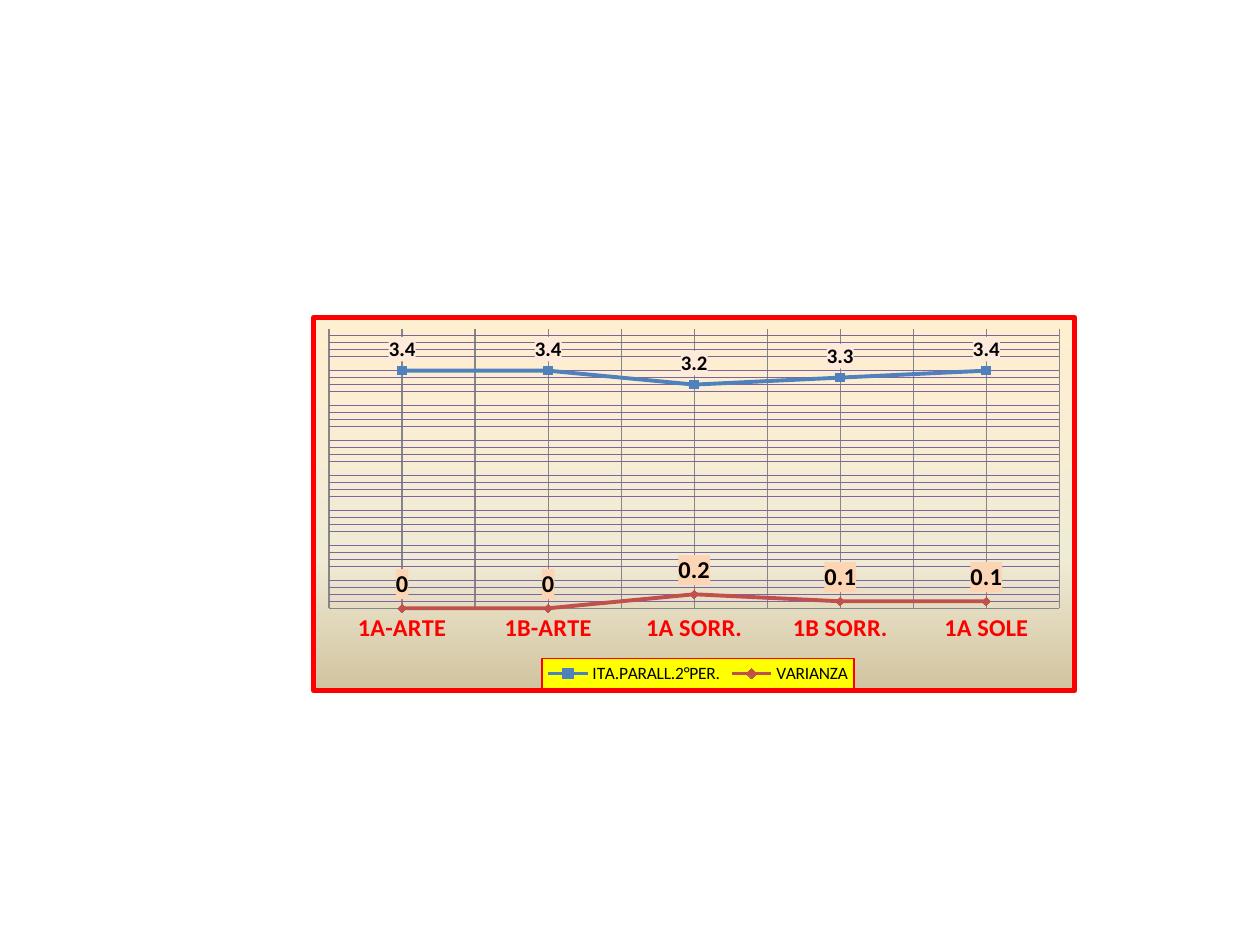
from lxml import etree
from pptx import Presentation
from pptx.chart.data import CategoryChartData
from pptx.dml.color import RGBColor
from pptx.enum.chart import XL_CHART_TYPE, XL_LABEL_POSITION, XL_LEGEND_POSITION, XL_TICK_MARK
from pptx.oxml import parse_xml
from pptx.oxml.ns import qn
from pptx.util import Inches, Pt

LINE = XL_CHART_TYPE.LINE
ABOVE = XL_LABEL_POSITION.ABOVE
BOTTOM = XL_LEGEND_POSITION.BOTTOM
NO_TICK = XL_TICK_MARK.NONE
NS = ('xmlns:c="http://schemas.openxmlformats.org/drawingml/2006/chart" '
      'xmlns:a="http://schemas.openxmlformats.org/drawingml/2006/main"')
C = {"red": "FF0000", "yellow": "FFFF00", "black": "000000", "grid": "868686",
     "purple": "8064A2", "blue": "4F81BD", "brick": "C0504D",
     "pale": "FDEADA", "peach": "FCD5B5"}


def sp_pr(fill="", line=None, width=0.75):
    """Shape properties for chart parts that have no format object."""
    ln = ""
    if line:
        ln = (f'<a:ln w="{Pt(width)}"><a:solidFill><a:srgbClr val="{line}"/>'
              '</a:solidFill></a:ln>')
    return parse_xml(f"<c:spPr {NS}>{fill}{ln}</c:spPr>")


def layout(x, y, w, h, inner=False):
    """Manual layout in fractions of the chart."""
    el = etree.Element(qn("c:layout"))
    man = etree.SubElement(el, qn("c:manualLayout"))
    items = [("layoutTarget", "inner")] if inner else []
    items += [("xMode", "edge"), ("yMode", "edge"),
              ("x", x), ("y", y), ("w", w), ("h", h)]
    for tag, val in items:
        etree.SubElement(man, qn("c:" + tag)).set("val", str(val))
    return el


prs = Presentation()
prs.slide_width, prs.slide_height = Inches(10), Inches(7.5)
s = prs.slides.add_slide(prs.slide_layouts[6])

# Chart data
data = CategoryChartData()
data.categories = ["1A-ARTE", "1B-ARTE", "1A SORR.", "1B SORR.", "1A SOLE"]
data.add_series("ITA.PARALL.2°PER.", [3.4, 3.4, 3.2, 3.3, 3.4])
data.add_series("VARIANZA", [0, 0, 0.2, 0.1, 0.1])
chart = s.shapes.add_chart(LINE, Inches(2.47), Inches(2.5), Inches(6.08),
                           Inches(3), data).chart
chart.has_title = False
chart.font.name, chart.font.size = "Calibri", Pt(10)
chart.font.color.rgb = RGBColor.from_string(C["black"])

# Chart background and red frame
stops = "".join(f'<a:gs pos="{pos * 1000}"><a:srgbClr val="{color}"/></a:gs>'
                for pos, color in [(0, "FFEFD1"), (65, "F0EBD5"), (100, "D1C39F")])
gradient = (f'<a:gradFill><a:gsLst>{stops}</a:gsLst>'
            '<a:lin ang="5400000" scaled="0"/></a:gradFill>')
space = chart._chartSpace
space.find(qn("c:txPr")).addprevious(sp_pr(gradient, C["red"], 3))

# Plot area position
area = space.find(".//" + qn("c:plotArea"))
for old in area.findall(qn("c:layout")):
    area.remove(old)
area.insert(0, layout(0.02, 0.03, 0.96, 0.75, inner=True))

# Axes and gridlines
cat, val = chart.category_axis, chart.value_axis
cat.major_tick_mark = cat.minor_tick_mark = NO_TICK
cat.has_major_gridlines = cat.has_minor_gridlines = True
cat.tick_labels.font.size, cat.tick_labels.font.bold = Pt(14), True
cat.tick_labels.font.color.rgb = RGBColor.from_string(C["red"])
for fmt in (cat.format, cat.major_gridlines.format):
    fmt.line.color.rgb = RGBColor.from_string(C["grid"])
    fmt.line.width = Pt(0.75)
val.minimum_scale, val.maximum_scale = 0, 4
val.major_unit, val.minor_unit = 0.5, 0.1
val.has_major_gridlines, val.has_minor_gridlines = False, True
val.visible = False
for axis, color in [("c:catAx", C["grid"]), ("c:valAx", C["purple"])]:
    grid = area.find(qn(axis)).find(qn("c:minorGridlines"))
    grid.append(sp_pr(line=color))

# Series lines and value labels
styles = [("blue", "pale", 12), ("brick", "peach", 14)]
for ser, (color, back, size) in zip(chart.plots[0].series, styles):
    ser.smooth = False
    ser.format.line.color.rgb = RGBColor.from_string(C[color])
    ser.format.line.width = Pt(2.25)
    ser.marker.style = None
    labels = ser.data_labels
    labels.show_value, labels.position = True, ABOVE
    labels.font.size, labels.font.bold = Pt(size), True
    fill = f'<a:solidFill><a:srgbClr val="{C[back]}"/></a:solidFill>'
    labels._element.find(qn("c:txPr")).addprevious(sp_pr(fill))

# Legend
chart.has_legend = True
legend = chart.legend
legend.position, legend.include_in_layout = BOTTOM, False
legend.font.size = Pt(10)
el = legend._element
for old in el.findall(qn("c:layout")):
    el.remove(old)
el.find(qn("c:legendPos")).addnext(layout(0.3, 0.915, 0.41, 0.08))
fill = f'<a:solidFill><a:srgbClr val="{C["yellow"]}"/></a:solidFill>'
el.find(qn("c:txPr")).addprevious(sp_pr(fill, C["red"]))

prs.save("out.pptx")
